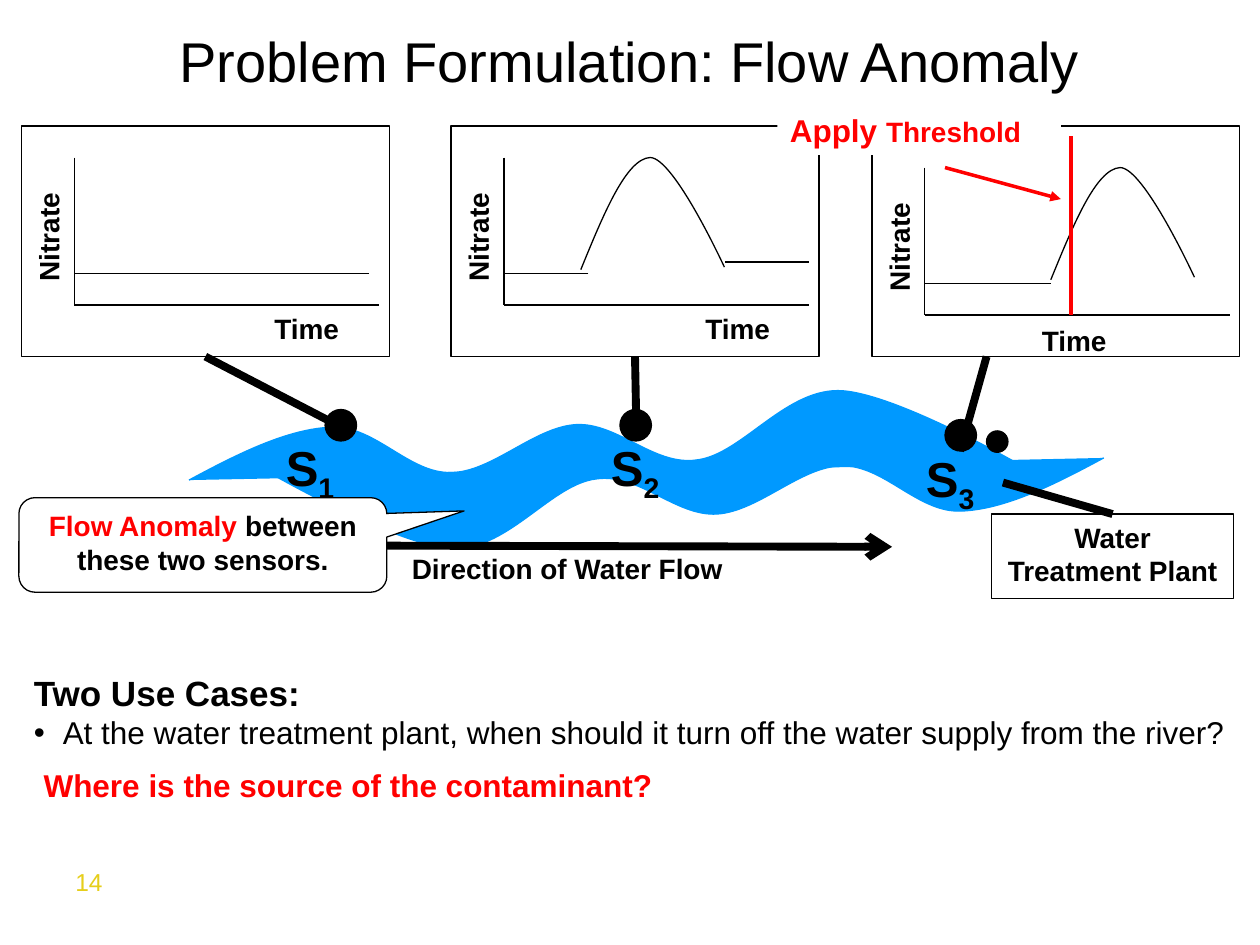
import dataclasses
import math
import typing

import lxml.etree
import pptx
import pptx.dml.color
import pptx.enum.shapes
import pptx.enum.text
import pptx.oxml.ns
import pptx.util

Inches = pptx.util.Inches
qn = pptx.oxml.ns.qn
SHAPES = pptx.enum.shapes.MSO_SHAPE
CENTER = pptx.enum.text.PP_ALIGN.CENTER
BLACK, WHITE, RED, RIVER_BLUE, GOLD = "000000", "FFFFFF", "FF0000", "0099FF", "E6CE1A"
Point = typing.Tuple[float, float]


@dataclasses.dataclass
class Run:
    text: str
    size: float = 16
    color: str = BLACK
    bold: bool = True
    subscript: bool = False


@dataclasses.dataclass
class Panel:
    left: float
    drop: float
    baseline: float
    time: Point
    hump: typing.Optional[float] = None
    fill: typing.Optional[str] = None


@dataclasses.dataclass
class Sensor:
    number: str
    dot: Point
    label: Point


@dataclasses.dataclass
class Bank:
    left: float
    top: float
    rotation: float


PANELS = [
    Panel(0.17, 0, 2.34, (2.08, 2.42)),
    Panel(3.58, 0, 0.67, (5.5, 2.42), hump=0.61),
    Panel(6.92, 0.08, 1, (8.17, 2.52), hump=1, fill=WHITE),
]
SENSORS = [
    Sensor("1", (2.58, 3.25), (2.17, 3.42)),
    Sensor("2", (4.92, 3.25), (4.75, 3.42)),
    Sensor("3", (7.5, 3.33), (7.25, 3.51)),
]
BANKS = [Bank(2.88, 1.06, 304.4), Bank(3.55, 1.04, 124.3)]
BANK_SIZE = (3.83, 5.35)
HUMP_SIZE = (1.14, 0.89)
HUMP = [(0, 0.89), (0.18, 0.45), (0.36, 0.01), (0.55, 0), (0.74, 0), (1.14, 0.87), (1.14, 0.87)]
SHORE = [
    (1.5, 3.81), (1.89, 3.6), (2.29, 3.4), (2.64, 3.39), (2.98, 3.38), (3.25, 3.76), (3.58, 3.75),
    (3.9, 3.75), (4.24, 3.39), (4.57, 3.37), (4.9, 3.35), (5.19, 3.7), (5.53, 3.65),
    (5.88, 3.61), (6.22, 3.1), (6.65, 3.1), (7.07, 3.1), (8.08, 3.68), (8.08, 3.68),
]


def rgb(value: str) -> pptx.dml.color.RGBColor:
    """Turn a hex string into a colour."""
    return pptx.dml.color.RGBColor.from_string(value)


def paint(shape, fill: typing.Optional[str], line: typing.Optional[str]) -> None:
    """Set the fill and outline of a shape and drop its shadow."""
    shape.shadow.inherit = False
    if fill:
        shape.fill.solid()
        shape.fill.fore_color.rgb = rgb(fill)
    else:
        shape.fill.background()
    if line:
        shape.line.color.rgb = rgb(line)
        shape.line.width = pptx.util.Pt(0.75)
    else:
        shape.line.fill.background()


def write(shape, paragraphs: typing.List[typing.List[Run]], align=None, anchor=None) -> None:
    """Fill a shape with formatted paragraphs."""
    frame = shape.text_frame
    frame.word_wrap = True
    frame.vertical_anchor = anchor or pptx.enum.text.MSO_ANCHOR.TOP
    for index, runs in enumerate(paragraphs):
        paragraph = frame.add_paragraph() if index else frame.paragraphs[0]
        paragraph.alignment = align or pptx.enum.text.PP_ALIGN.LEFT
        for item in runs:
            run = paragraph.add_run()
            run.text = item.text
            formats = {"name": "Arial", "size": pptx.util.Pt(item.size), "bold": item.bold}
            for attribute, value in formats.items():
                setattr(run.font, attribute, value)
            run.font.color.rgb = rgb(item.color)
            if item.subscript:
                run.font._element.set("baseline", "-25000")


def add_text(slide, box: typing.Sequence[float], *paragraphs: typing.List[Run], **layout):
    """Add a text box."""
    shape = slide.shapes.add_textbox(*map(Inches, box))
    write(shape, list(paragraphs), **layout)
    return shape


def add_box(slide, kind, box: typing.Sequence[float], fill=None, line=BLACK):
    """Add a painted preset shape."""
    shape = slide.shapes.add_shape(kind, *map(Inches, box))
    paint(shape, fill, line)
    return shape


def add_line(slide, start: Point, end: Point, width=0.75, color=BLACK, arrow=None):
    """Add a straight connector, with an arrowhead at its end if asked."""
    connector = slide.shapes.add_connector(
        pptx.enum.shapes.MSO_CONNECTOR.STRAIGHT, *map(Inches, (*start, *end)))
    connector.line.color.rgb = rgb(color)
    connector.line.width = pptx.util.Pt(width)
    if arrow:
        lxml.etree.SubElement(connector.line._get_or_add_ln(), qn("a:tailEnd"), type=arrow)
    lxml.etree.SubElement(connector._element.spPr, qn("a:effectLst"))
    return connector


def add_curve(slide, corner: Point, size: Point, controls: typing.List[Point], fill, line):
    """Add a freeform of cubic curves whose controls are measured from its corner."""
    left, top = corner
    builder = slide.shapes.build_freeform(Inches(left), Inches(top))
    builder.add_line_segments([(Inches(left + size[0]), Inches(top + size[1]))], close=False)
    shape = builder.convert_to_shape()
    outline = next(shape._element.iter(qn("a:path")))
    for child in list(outline):
        outline.remove(child)
    for index, (x, y) in enumerate(controls):
        if index % 3 == 1 or index == 0:
            command = lxml.etree.SubElement(outline, qn("a:cubicBezTo" if index else "a:moveTo"))
        lxml.etree.SubElement(command, qn("a:pt"), x=str(Inches(x)), y=str(Inches(y)))
    paint(shape, fill, line)
    return shape


def shore_controls(bank: Bank) -> typing.List[Point]:
    """Turn the shore back into the upright frame of its bank."""
    half_width, half_height = (side / 2 for side in BANK_SIZE)
    cosine, sine = (f(math.radians(-bank.rotation)) for f in (math.cos, math.sin))
    offsets = [(x - bank.left - half_width, y - bank.top - half_height) for x, y in SHORE]
    return [(half_width + x * cosine - y * sine, half_height + x * sine + y * cosine)
            for x, y in offsets]


def add_panel(slide, panel: Panel):
    """Draw one nitrate plot and return its frame."""
    frame = add_box(slide, SHAPES.RECTANGLE, (panel.left, 1, 2.92, 1.83), panel.fill)
    x, top = panel.left + 0.42, 1.25 + panel.drop
    bottom, level = top + 1.17, top + 0.92
    if panel.hump is not None:
        add_curve(slide, (x + panel.hump, top), HUMP_SIZE, HUMP, WHITE, BLACK)
    add_line(slide, (x, top), (x, bottom))
    add_line(slide, (x, bottom), (x + 2.42, bottom))
    add_line(slide, (x + panel.baseline, level), (x, level))
    add_text(slide, (*panel.time, 1.33, 0.37), [Run("Time")])
    add_text(slide, (x - 0.87, top + 0.23, 1.33, 0.37), [Run("Nitrate")]).rotation = 270
    return frame


def main() -> None:
    """Build the flow anomaly slide."""
    presentation = pptx.Presentation()
    presentation.slide_width, presentation.slide_height = Inches(10), Inches(7.5)
    slide = presentation.slides.add_slide(presentation.slide_layouts[6])
    add_text(slide, (0.5, 0.17, 9, 0.62), [Run("Problem Formulation: Flow Anomaly", 32, bold=False)],
             align=CENTER, anchor=pptx.enum.text.MSO_ANCHOR.MIDDLE)
    add_text(slide, (0.5, 6.83, 2.33, 0.52), [Run("14", 14, GOLD, bold=False)])

    controls = shore_controls(BANKS[0])
    for bank in BANKS:
        corner = (bank.left, bank.top)
        shape = add_curve(slide, corner, BANK_SIZE, controls, RIVER_BLUE, RIVER_BLUE)
        shape.rotation = bank.rotation
    add_box(slide, SHAPES.OVAL, (7.83, 3.42, 0.17, 0.17), BLACK)
    plant = add_box(slide, SHAPES.RECTANGLE, (7.87, 4.08, 1.92, 0.67), WHITE)
    write(plant, [[Run("Water Treatment Plant")]], align=CENTER)
    add_line(slide, (7.96, 3.83), (8.83, 4.08), 4.5).end_connect(plant, 0)

    frames = [add_panel(slide, panel) for panel in PANELS]
    add_line(slide, (6.42, 2.08), (5.75, 2.08))
    for frame, sensor_point in zip(frames, [(2.67, 3.37), (5.05, 3.37)]):
        add_line(slide, sensor_point, (5, 2.83), 4.5).end_connect(frame, 2)
    add_line(slide, (7.62, 3.58), (7.83, 2.83), 4.5)

    add_line(slide, (8.5, 1.08), (8.5, 2.5), 2, RED)
    threshold = add_box(slide, SHAPES.RECTANGLE, (6.17, 0.83, 2.25, 0.4), WHITE, None)
    write(threshold, [[Run("Apply ", 18, RED), Run("Threshold", 16, RED)]])
    add_line(slide, (7.5, 1.33), (8.42, 1.58), 2, RED, "triangle")

    for sensor in SENSORS:
        add_text(slide, (*sensor.label, 0.75, 0.57),
                 [Run("S", 28), Run(sensor.number, 28, subscript=True)])
        add_box(slide, SHAPES.OVAL, (*sensor.dot, 0.25, 0.25), BLACK)

    add_line(slide, (2.75, 4.33), (7.08, 4.34), 4.5, arrow="arrow")
    add_text(slide, (3.17, 4.33, 4.42, 0.37), [Run("Direction of Water Flow")])
    callout = add_box(slide, SHAPES.ROUNDED_RECTANGULAR_CALLOUT, (0.15, 3.95, 2.92, 0.75), WHITE)
    for index, value in enumerate((0.71, -0.36, 0.17)):
        callout.adjustments[index] = value
    write(callout, [[Run("Flow Anomaly ", color=RED), Run("between these two sensors.")]],
          align=CENTER)

    cases = add_text(
        slide, (0.17, 5.28, 9.83, 0.74), [Run("Two Use Cases:", 20)],
        [Run("At the water treatment plant, when should it turn off the water supply from the river?",
             18, bold=False)])
    properties = cases.text_frame.paragraphs[1]._p.get_or_add_pPr()
    for name, value in {"marL": Inches(0.23), "indent": -Inches(0.23)}.items():
        properties.set(name, str(value))
    lxml.etree.SubElement(properties, qn("a:buFont"), typeface="Arial")
    lxml.etree.SubElement(properties, qn("a:buChar"), char="•")
    add_text(slide, (0.17, 6, 8.75, 0.44),
             [Run(" ", 20), Run("Where is the source of the contaminant?", 18, RED)])
    presentation.save("out.pptx")


if __name__ == "__main__":
    main()
